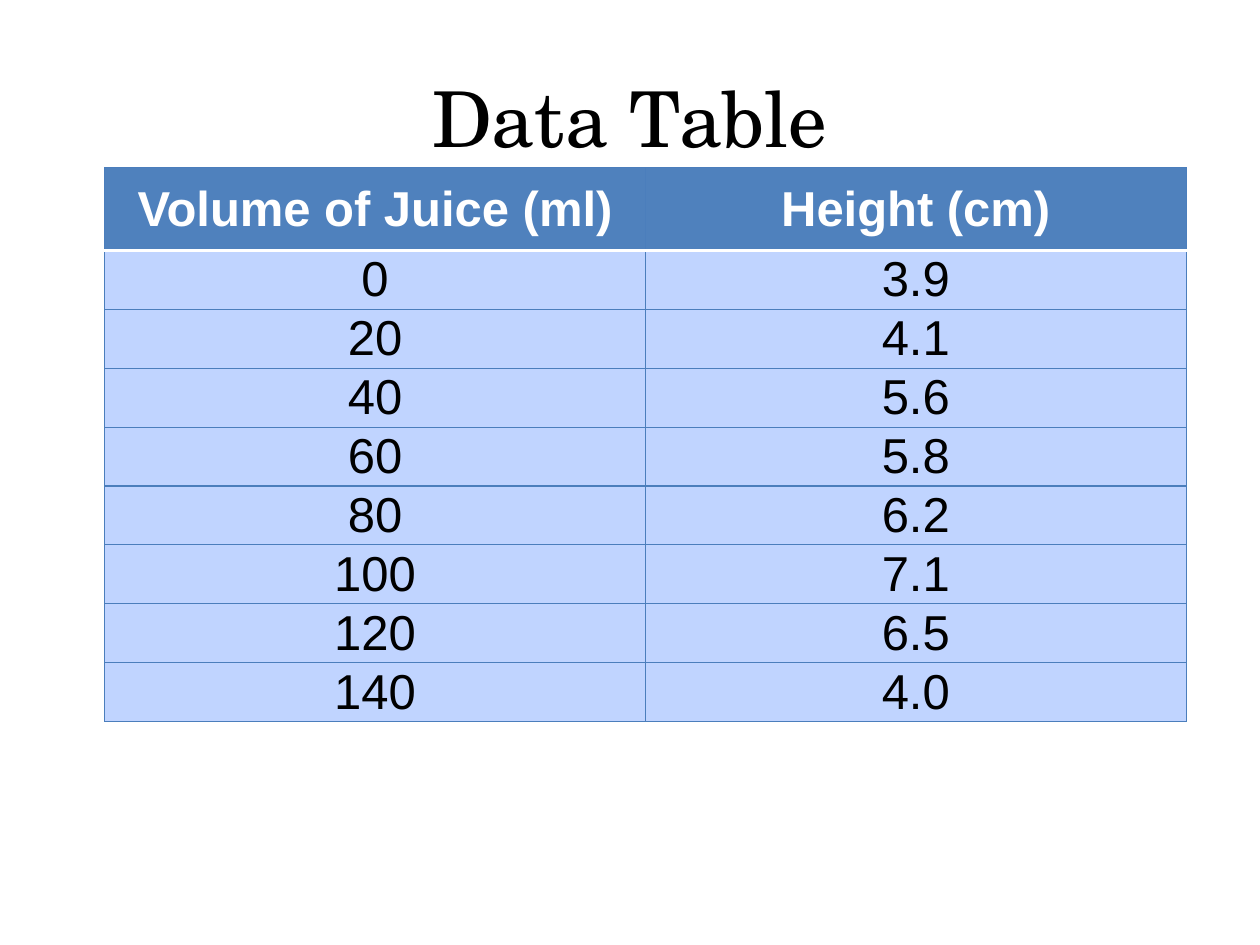
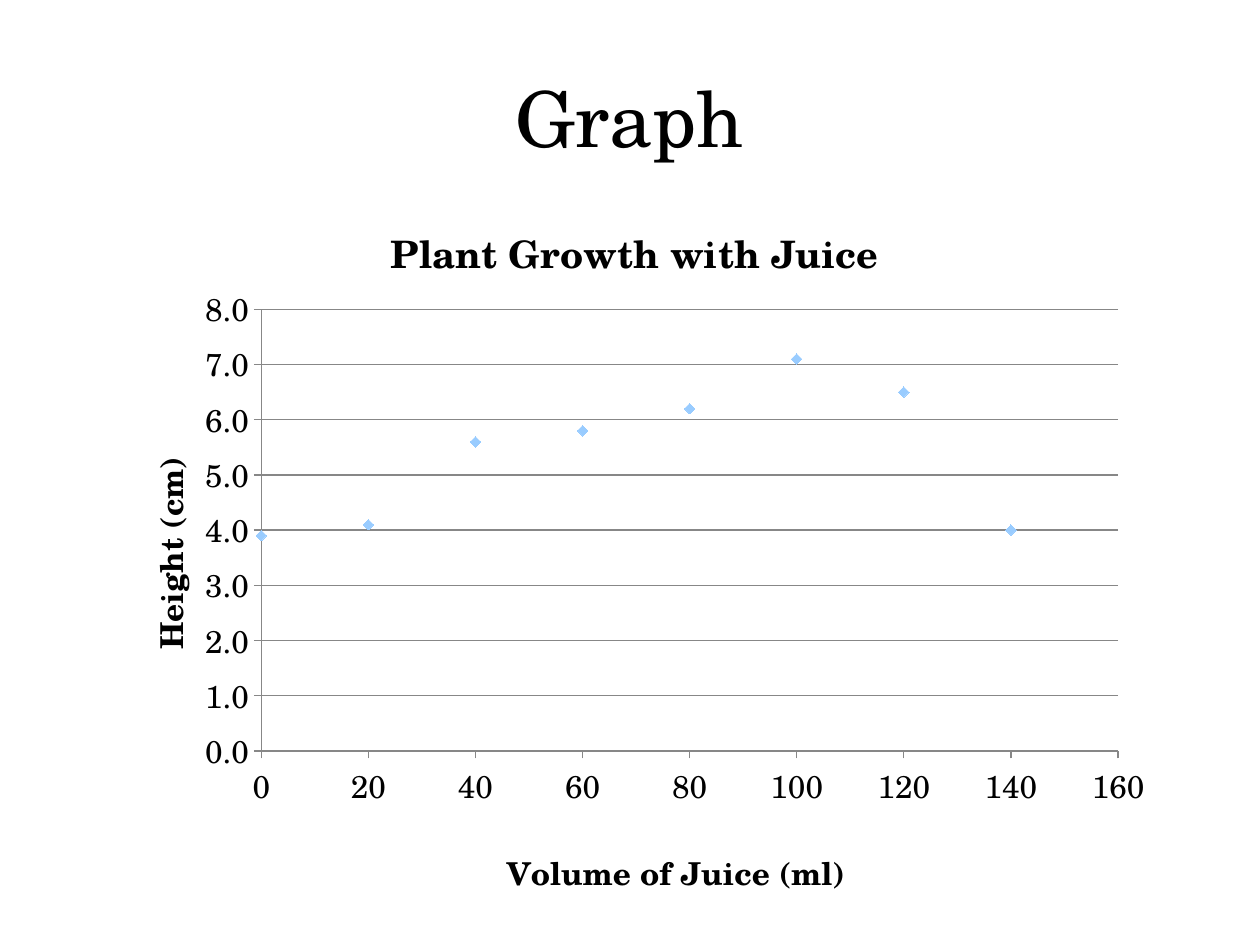
from dataclasses import dataclass

from lxml.etree import SubElement
from pptx import Presentation
from pptx.chart.axis import ValueAxis
from pptx.chart.chart import Chart
from pptx.chart.data import XyChartData
from pptx.dml.color import RGBColor
from pptx.enum.chart import XL_CHART_TYPE, XL_MARKER_STYLE, XL_TICK_MARK
from pptx.enum.text import MSO_ANCHOR, PP_ALIGN
from pptx.oxml.ns import qn
from pptx.oxml.xmlchemy import BaseOxmlElement
from pptx.presentation import Presentation as Deck
from pptx.slide import Slide
from pptx.table import _Cell as Cell
from pptx.text.text import Font
from pptx.util import Cm, Pt


@dataclass(frozen=True)
class Theme:
    heading_font: str = "TeX Gyre Schola"
    table_font: str = "Arial"
    ink: str = "000000"
    paper: str = "FFFFFF"
    header_fill: str = "4F81BD"
    body_fill: str = "C0D4FF"
    border: str = "4B7EBC"
    axis_line: str = "878787"
    marker: str = "99CCFF"
    title_size: float = 44
    table_size: float = 28
    chart_title_size: float = 21.6
    chart_size: float = 18
    hairline: float = 0.75
    header_rule: float = 2


@dataclass(frozen=True)
class Reading:
    volume: int
    height: float


@dataclass(frozen=True)
class Border:
    color: str
    width: float


@dataclass(frozen=True)
class AxisPlan:
    title: str
    maximum: float
    step: float
    number_format: str
    gridlines: bool
    title_left: float
    title_top: float


THEME = Theme()
VOLUME_LABEL = "Volume of Juice (ml)"
HEIGHT_LABEL = "Height (cm)"
HEIGHTS = (3.9, 4.1, 5.6, 5.8, 6.2, 7.1, 6.5, 4.0)
READINGS = [Reading(20 * index, height) for index, height in enumerate(HEIGHTS)]
VOLUME_AXIS = AxisPlan(VOLUME_LABEL, 160, 20, "0", False, 0.38, 0.9)
HEIGHT_AXIS = AxisPlan(HEIGHT_LABEL, 8, 1, "0.0", True, 0.04, 0.38)


def style_font(font: Font, name: str, size: float, color: str, bold: bool = False) -> None:
    font.name = name
    font.size = Pt(size)
    font.bold = bold
    font.color.rgb = RGBColor.from_string(color)


def add_titled_page(deck: Deck, title: str) -> Slide:
    page = deck.slides.add_slide(deck.slide_layouts[6])
    box = page.shapes.add_textbox(Cm(1.27), Cm(0.76), Cm(22.86), Cm(3.18))
    frame = box.text_frame
    frame.word_wrap = True
    frame.vertical_anchor = MSO_ANCHOR.MIDDLE
    para = frame.paragraphs[0]
    para.text = title
    para.alignment = PP_ALIGN.CENTER
    style_font(para.font, THEME.heading_font, THEME.title_size, THEME.ink)
    return page


# Table
def set_borders(cell: Cell, borders: dict[str, Border]) -> None:
    properties = cell._tc.get_or_add_tcPr()
    for side in ("L", "R", "T", "B"):
        border = borders[side]
        line = SubElement(properties, qn(f"a:ln{side}"), w=str(Pt(border.width)))
        fill = SubElement(line, qn("a:solidFill"))
        SubElement(fill, qn("a:srgbClr"), val=border.color)


def fill_cell(cell: Cell, text: str, row: int) -> None:
    is_header = row == 0
    borders = dict.fromkeys("LRTB", Border(THEME.border, THEME.hairline))
    if row < 2:
        borders["B" if is_header else "T"] = Border(THEME.paper, THEME.header_rule)
    set_borders(cell, borders)
    cell.fill.solid()
    cell.fill.fore_color.rgb = RGBColor.from_string(
        THEME.header_fill if is_header else THEME.body_fill
    )
    cell.margin_left = cell.margin_right = cell.margin_top = cell.margin_bottom = 0
    cell.vertical_anchor = MSO_ANCHOR.MIDDLE
    para = cell.text_frame.paragraphs[0]
    para.text = text
    para.alignment = PP_ALIGN.CENTER
    color = THEME.paper if is_header else THEME.ink
    style_font(para.font, THEME.table_font, THEME.table_size, color, is_header)


def add_readings_table(page: Slide) -> None:
    rows = [(VOLUME_LABEL, HEIGHT_LABEL)]
    rows += [(str(item.volume), f"{item.height:.1f}") for item in READINGS]
    header_height, body_height = Cm(1.67), Cm(1.1)
    total_height = header_height + body_height * len(READINGS)
    table = page.shapes.add_table(
        len(rows), 2, Cm(2.11), Cm(3.38), Cm(21.8), total_height
    ).table
    table.horz_banding = False
    for row, texts in enumerate(rows):
        table.rows[row].height = body_height if row else header_height
        for column, text in enumerate(texts):
            fill_cell(table.cell(row, column), text, row)


# Chart
def place(element: BaseOxmlElement, index: int, **settings: float | str) -> None:
    """Give a chart part a manual layout, as fractions of the chart."""
    for old in element.findall(qn("c:layout")):
        element.remove(old)
    layout = element.makeelement(qn("c:layout"), {})
    manual = SubElement(layout, qn("c:manualLayout"))
    for name, value in settings.items():
        SubElement(manual, qn(f"c:{name}"), val=str(value))
    element.insert(index, layout)


def place_title(element: BaseOxmlElement, left: float, top: float) -> None:
    place(element, 1, xMode="edge", yMode="edge", x=left, y=top)


def style_axis(axis: ValueAxis, plan: AxisPlan) -> None:
    axis.minimum_scale = 0
    axis.maximum_scale = plan.maximum
    axis.major_unit = plan.step
    axis.major_tick_mark = XL_TICK_MARK.OUTSIDE
    axis.minor_tick_mark = XL_TICK_MARK.NONE
    axis.has_major_gridlines = plan.gridlines
    axis.tick_labels.number_format = plan.number_format
    axis.tick_labels.number_format_is_linked = False
    lines = [axis.format.line]
    if plan.gridlines:
        lines.append(axis.major_gridlines.format.line)
    for line in lines:
        line.width = Pt(THEME.hairline)
        line.color.rgb = RGBColor.from_string(THEME.axis_line)
    para = axis.axis_title.text_frame.paragraphs[0]
    para.text = plan.title
    style_font(para.font, THEME.heading_font, THEME.chart_size, THEME.ink, True)
    place_title(axis.axis_title.element, plan.title_left, plan.title_top)


def style_series(chart: Chart) -> None:
    plot = chart.plots[0]
    plot.vary_by_categories = False
    series = plot.series[0]
    series.format.line.fill.background()
    series.marker.style = XL_MARKER_STYLE.DIAMOND
    series.marker.size = 6
    series.marker.format.fill.solid()
    series.marker.format.fill.fore_color.rgb = RGBColor.from_string(THEME.marker)
    series.marker.format.line.fill.background()


def add_growth_chart(page: Slide) -> None:
    data = XyChartData()
    points = data.add_series("Series 1")
    for item in READINGS:
        points.add_data_point(item.volume, item.height)
    chart = page.shapes.add_chart(
        XL_CHART_TYPE.XY_SCATTER, Cm(1.9), Cm(3.38), Cm(21.59), Cm(15.04), data
    ).chart
    style_font(chart.font, THEME.heading_font, THEME.chart_size, THEME.ink)
    chart.has_legend = False
    chart.has_title = True
    para = chart.chart_title.text_frame.paragraphs[0]
    para.text = "Plant Growth with Juice"
    style_font(para.font, THEME.heading_font, THEME.chart_title_size, THEME.ink, True)
    place_title(chart.chart_title.element, 0.27, 0.06)
    style_axis(chart.category_axis, VOLUME_AXIS)
    style_axis(chart.value_axis, HEIGHT_AXIS)
    style_series(chart)
    plot_area = chart.element.find(f".//{qn('c:plotArea')}")
    place(plot_area, 0, layoutTarget="inner", xMode="edge", yMode="edge",
          x=0.156, y=0.19, w=0.8, h=0.592)


def main() -> None:
    deck = Presentation()
    deck.slide_width, deck.slide_height = Cm(25.4), Cm(19.05)
    add_readings_table(add_titled_page(deck, "Data Table"))
    add_growth_chart(add_titled_page(deck, "Graph"))
    deck.save("out.pptx")


if __name__ == "__main__":
    main()
